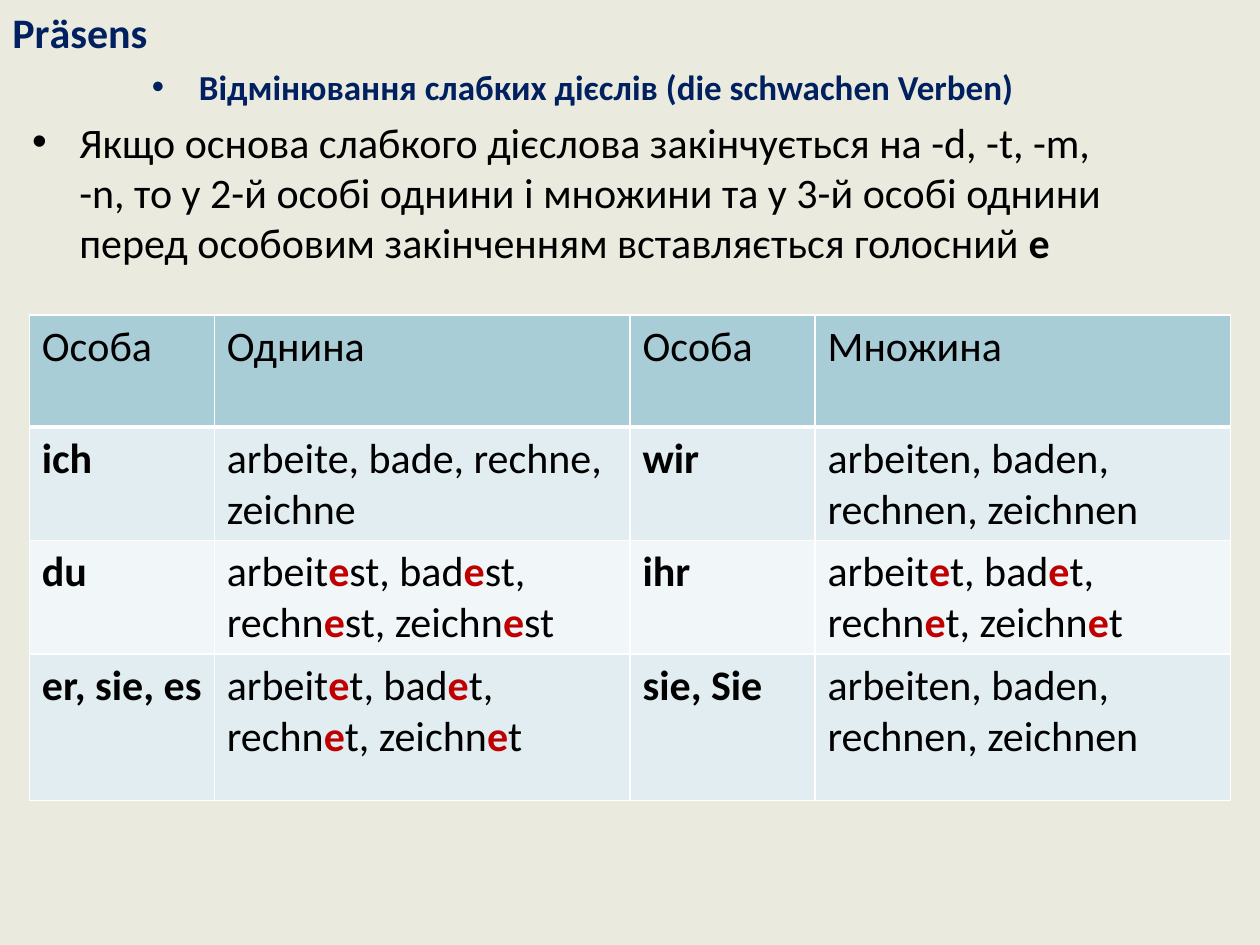
from lxml.etree import SubElement as Sub
from pptx import Presentation
from pptx.dml.color import RGBColor as RGB
from pptx.enum.text import PP_ALIGN as Align
from pptx.oxml.ns import qn
from pptx.util import Cm, Pt

BACK = RGB(0xEA, 0xEB, 0xDE)
NAVY = RGB(0x00, 0x20, 0x60)
BLACK = RGB(0x00, 0x00, 0x00)
RED = RGB(0xC0, 0x00, 0x00)
WHITE = RGB(0xFF, 0xFF, 0xFF)
HEAD = RGB(0xA8, 0xCD, 0xD7)
BANDS = RGB(0xE1, 0xED, 0xF0), RGB(0xF1, 0xF6, 0xF8)

WIDTHS = (3.73, 8.38) * 2
HEIGHTS = 2.26, 2.28, 2.28, 2.95
# Letters between asterisks are the inserted vowel
PLURAL = "arbeiten, baden, rechnen, zeichnen"
WITH_ET = "arbeit*e*t, bad*e*t, rechn*e*t, zeichn*e*t"
WITH_EST = "arbeit*e*st, bad*e*st, rechn*e*st, zeichn*e*st"
ROWS = [
    ("Особа", "Однина", "Особа", "Множина"),
    ("ich", "arbeite, bade, rechne, zeichne", "wir", PLURAL),
    ("du", WITH_EST, "ihr", WITH_ET),
    ("er, sie, es", WITH_ET, "sie, Sie", PLURAL),
]


def style(par, size, color, bold=None):
    font = par.font
    font.name, font.size, font.bold = "Calibri", Pt(size), bold
    font.color.rgb = color


def bullet(par):
    props = par._p.get_or_add_pPr()
    props.set("marL", str(Cm(0.95)))
    props.set("indent", str(-Cm(0.95)))
    Sub(props, qn("a:buFont"), typeface="Arial")
    Sub(props, qn("a:buChar"), char="•")


def border(cell, row):
    props = cell._tc.get_or_add_tcPr()
    for side in "LRTB":
        thick = (row, side) in ((0, "B"), (1, "T"))
        line = Sub(props, qn("a:ln" + side), w=str(Pt(3 if thick else 1)))
        fill = Sub(line, qn("a:solidFill"))
        Sub(fill, qn("a:srgbClr"), val=str(WHITE))


def add_title(slide, x, y, w, h):
    frame = slide.shapes.add_textbox(Cm(x), Cm(y), Cm(w), Cm(h)).text_frame
    par = frame.paragraphs[0]
    par.text = "Prӓsens"
    style(par, 24, NAVY, True)


def add_rule(slide, x, y, w, h):
    frame = slide.shapes.add_textbox(Cm(x), Cm(y), Cm(w), Cm(h)).text_frame
    frame.word_wrap = True

    # Topic
    topic = frame.paragraphs[0]
    topic.text = "Відмінювання слабких дієслів (die schwachen Verben) "
    topic.alignment = Align.CENTER
    style(topic, 20, NAVY, True)
    bullet(topic)

    # Rule with its vowel in bold
    rule = frame.add_paragraph()
    rule.add_run().text = (
        "Якщо основа слабкого дієслова закінчується на -d, -t, -m, -n, "
        "то у 2-й особі однини і множини та у 3-й особі однини "
        "перед особовим закінченням вставляється голосний ")
    vowel = rule.add_run()
    vowel.text = "е"
    vowel.font.bold = True
    rule.space_before = Pt(4.8)
    style(rule, 24, BLACK)
    bullet(rule)


def fill_cell(cell, text, row, col):
    par = cell.text_frame.paragraphs[0]
    style(par, 24, BLACK, row > 0 and col % 2 == 0)
    for i, part in enumerate(text.split("*")):
        run = par.add_run()
        run.text = part
        if i % 2:
            run.font.bold = True
            run.font.color.rgb = RED
    border(cell, row)
    cell.fill.solid()
    cell.fill.fore_color.rgb = BANDS[(row - 1) % 2] if row else HEAD


def add_verbs(slide, x, y):
    table = slide.shapes.add_table(
        len(ROWS), len(WIDTHS), Cm(x), Cm(y),
        Cm(sum(WIDTHS)), Cm(sum(HEIGHTS))).table
    # Plain cells: the header is not bold
    table.first_row = table.horz_banding = False
    for col, width in zip(table.columns, WIDTHS):
        col.width = Cm(width)
    for r, texts in enumerate(ROWS):
        table.rows[r].height = Cm(HEIGHTS[r])
        for c, text in enumerate(texts):
            fill_cell(table.cell(r, c), text, r, c)


def main():
    deck = Presentation()
    deck.slide_width, deck.slide_height = Cm(25.4), Cm(19.05)
    slide = deck.slides.add_slide(deck.slide_layouts[6])
    slide.background.fill.solid()
    slide.background.fill.fore_color.rgb = BACK
    add_rule(slide, 0.4, 1.2, 22.86, 12.57)
    add_title(slide, 0, 0, 3.58, 1.28)
    add_verbs(slide, 0.59, 6.35)
    deck.save("out.pptx")


if __name__ == "__main__":
    main()
